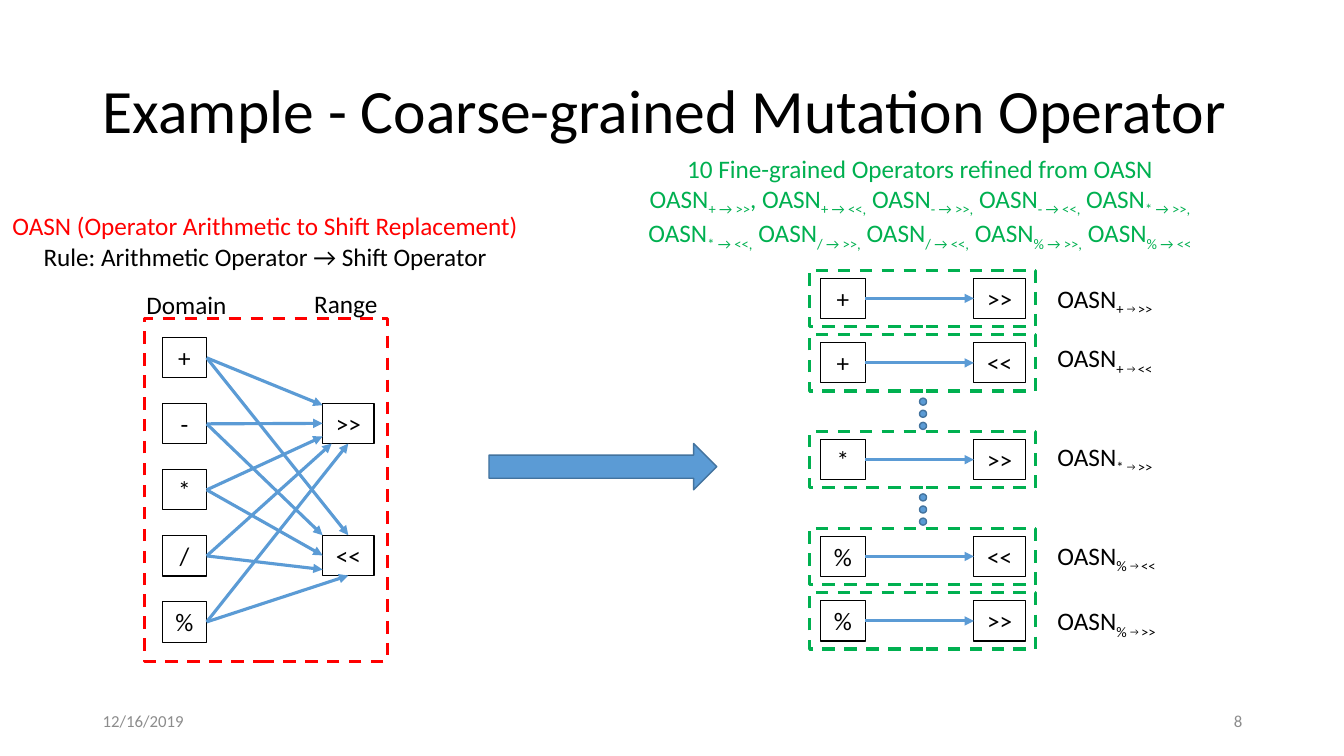
from itertools import product

from lxml.etree import SubElement as add_xml
from pptx import Presentation
from pptx.dml.color import RGBColor
from pptx.enum.dml import MSO_LINE_DASH_STYLE as Dash
from pptx.enum.shapes import MSO_CONNECTOR as Connector, MSO_SHAPE as Shape
from pptx.enum.text import MSO_ANCHOR as Anchor, PP_ALIGN as Align
from pptx.oxml.ns import qn
from pptx.util import Inches, Pt

COLORS = {
    "black": "000000", "grey": "8C8C8C", "red": "FF0000",
    "green": "00B050", "blue": "5B9BD5", "navy": "43739E",
}
TOP, LEFT, BOTTOM, RIGHT = range(4)


def color(name):
    return RGBColor.from_string(COLORS[name])


class Page:
    """Holds the text style and the slide being drawn."""

    def __init__(self, slide, font="Calibri", size=18):
        self.shapes = slide.shapes
        self.font = font
        self.size = size

    def put_words(self, box, lines, align=Align.LEFT, anchor=Anchor.TOP,
                  wrap=True, spacing=None, **style):
        """Each line is a list of (text, format) spans; a None span breaks the line."""
        frame = box.text_frame
        for name, value in {"word_wrap": wrap, "vertical_anchor": anchor}.items():
            setattr(frame, name, value)
        for index, line in enumerate(lines):
            para = frame.add_paragraph() if index else frame.paragraphs[0]
            for name, value in {"alignment": align, "line_spacing": spacing}.items():
                setattr(para, name, value)
            for part in line:
                if part is None:
                    para.add_line_break()
                    continue
                words, extra = part
                look = {"size": self.size, "ink": "black", "sub": False, **style, **extra}
                span = para.add_run()
                span.text = words
                for name, value in {"name": self.font, "size": Pt(look["size"])}.items():
                    setattr(span.font, name, value)
                span.font.color.rgb = color(look["ink"])
                if look["sub"]:
                    span._r.get_or_add_rPr().set("baseline", "-25000")

    def text(self, area, lines, **style):
        box = self.shapes.add_textbox(*map(Inches, area))
        self.put_words(box, lines, **style)

    def shape(self, kind, area, line, width, fill=None, dash=None):
        shape = self.shapes.add_shape(kind, *map(Inches, area))
        shape.shadow.inherit = False
        if fill:
            shape.fill.solid()
            shape.fill.fore_color.rgb = color(fill)
        else:
            shape.fill.background()
        shape.line.color.rgb = color(line)
        for name, value in {"width": Pt(width), "dash_style": dash}.items():
            setattr(shape.line, name, value)
        return shape

    def operator(self, symbol, left, top, width):
        box = self.shape(Shape.RECTANGLE, (left, top, width, 0.4), "black", 0.75)
        self.put_words(box, [[(symbol, {})]], align=Align.CENTER)
        return box

    def frame(self, area, line):
        self.shape(Shape.RECTANGLE, area, line, 2.25, dash=Dash.DASH)

    def arrow(self, source, target, end):
        """Runs from the right side of source to a side of target, or to a point."""
        joined = isinstance(end, int)
        x, y = (0, 0) if joined else end
        link = self.shapes.add_connector(Connector.STRAIGHT, 0, 0, Inches(x), Inches(y))
        link.begin_connect(source, RIGHT)
        if joined:
            link.end_connect(target, end)
        link.line.color.rgb = color("blue")
        link.line.width = Pt(2.25)
        add_xml(link.line._get_or_add_ln(), qn("a:tailEnd"), type="triangle")
        add_xml(link._element.spPr, qn("a:effectLst"))


def main():
    deck = Presentation()
    deck.slide_width, deck.slide_height = Inches(13.33), Inches(7.5)
    page = Page(deck.slides.add_slide(deck.slide_layouts[6]))
    subscript = {"sub": True}

    # Title and footer
    page.text((0.92, 0.4, 11.5, 1.45), [[("Example - Coarse-grained Mutation Operator", {})]],
              size=44, anchor=Anchor.MIDDLE, spacing=0.9)
    for left, words, align in ((0.92, "12/16/2019", Align.LEFT), (9.42, "8", Align.RIGHT)):
        page.text((left, 6.95, 3, 0.4), [[(words, {})]], size=12, ink="grey",
                  align=align, anchor=Anchor.MIDDLE)

    # List of the ten refined operators, five on a line
    refined = []
    pairs = list(product("+-*/%", (">>", "<<")))
    for index, (symbol, shift) in enumerate(pairs):
        name = f"{symbol} → {shift}"
        if index == 0:
            refined += [("OASN", {}), (name, subscript), (", ", {})]
            continue
        lead = "OASN" if index in (1, 5) else " OASN"
        comma = "," if index < len(pairs) - 1 else ""
        refined += [(lead, {}), (name + comma, subscript)]
        if index == 4:
            refined.append(None)
    page.text((6.09, 1.47, 6.07, 1.01),
              [[("10 Fine-grained Operators refined from OASN", {})], refined],
              ink="green", align=Align.CENTER, wrap=False)

    # Fine-grained rows: operator, shift, middle of row, top of label
    rows = (("+", ">>", 2.96, 2.76), ("+", "<<", 3.6, 3.35), ("*", ">>", 4.56, 4.33),
            ("%", "<<", 5.52, 5.31), ("%", ">>", 6.16, 5.96))
    for symbol, shift, middle, label_top in rows:
        source = page.operator(symbol, 8.14, middle - 0.2, 0.44)
        target = page.operator(shift, 9.66, middle - 0.2, 0.51)
        page.arrow(source, target, LEFT)
        page.frame((8.03, middle - 0.28, 2.24, 0.56), "green")
        label = [("OASN", {}), (f"{symbol} ", subscript),
                 ("→ ", {"sub": True, "size": 12}), (shift, subscript)]
        page.text((10.39, label_top, 1.34, 0.4), [label])

    # Dots for the rows left out
    for first, step in product((3.95, 4.9), range(3)):
        page.shape(Shape.OVAL, (9.12, first + 0.12 * step, 0.07, 0.07), "navy", 1, fill="blue")

    # Block arrow from coarse to fine
    page.shape(Shape.RIGHT_ARROW, (4.85, 4.4, 2.26, 0.46), "navy", 1, fill="blue")

    # Coarse-grained mapping from domain to range
    right_shift = page.operator(">>", 3.2, 4, 0.51)
    left_shift = page.operator("<<", 3.2, 5.31, 0.51)
    page.frame((1.43, 3.16, 2.41, 3.4), "red")
    mapping = (("+", (3.2, 4.02), TOP), ("-", LEFT, (3.2, 5.31)),
               ("*", (3.2, 4.33), LEFT), ("/", (3.29, 4.4), (3.2, 5.65)),
               ("%", BOTTOM, BOTTOM))
    for index, (symbol, right_end, left_end) in enumerate(mapping):
        source = page.operator(symbol, 1.61, 3.35 + 0.655 * index, 0.44)
        page.arrow(source, right_shift, right_end)
        page.arrow(source, left_shift, left_end)

    # Headings of the mapping
    for left, top, words in ((1.35, 2.82, "Domain"), (2.93, 2.81, "Range")):
        page.text((left, top, 1, 0.4), [[(words, {})]], align=Align.CENTER)
    page.text((-0.04, 2.04, 5.34, 0.71),
              [[("OASN (Operator Arithmetic to Shift Replacement)", {"ink": "red"})],
               [("Rule: Arithmetic Operator → Shift Operator", {})]], align=Align.CENTER)

    deck.save("out.pptx")


if __name__ == "__main__":
    main()
